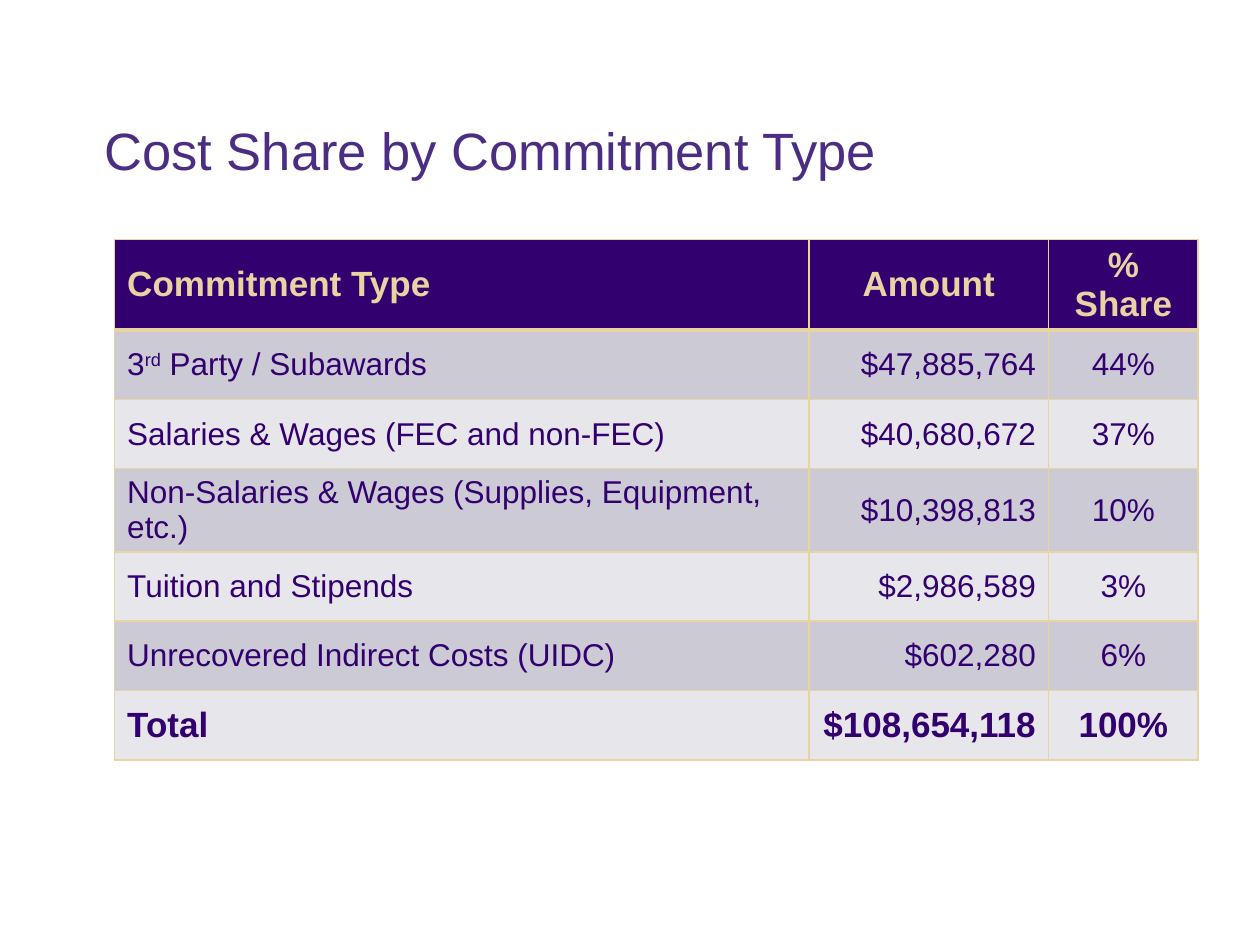
from lxml.etree import SubElement
from pptx import Presentation
from pptx.dml.color import RGBColor
from pptx.enum.text import MSO_ANCHOR as Anchor, MSO_AUTO_SIZE as AutoSize, PP_ALIGN as Align
from pptx.oxml.ns import qn
from pptx.util import Pt

TITLE = "Cost Share by Commitment Type"
HEADER = ("Commitment Type", "Amount", "% Share")
ITEMS = [
    (("3", "rd", " Party / Subawards"), "$47,885,764", "44%"),
    ("Salaries & Wages (FEC and non-FEC)", "$40,680,672", "37%"),
    ("Non-Salaries & Wages (Supplies, Equipment, etc.)", "$10,398,813", "10%"),
    ("Tuition and Stipends", "$2,986,589", "3%"),
    ("Unrecovered Indirect Costs (UIDC)", "$602,280", "6%"),
]
TOTAL = ("Total", "$108,654,118", "100%")
ROWS = [HEADER, *ITEMS, TOTAL]

FONT = "Arial"
PURPLE, TITLE_PURPLE, GOLD = "33006F", "4B2E83", "E8D3A2"
BANDS = ("E7E6EB", "CCCAD4")
TABLE_LEFT, TABLE_TOP, ROW_HEIGHT = 65.5, 136.8, 39.6
COLUMN_WIDTHS = (396.7, 137, 85.5)
ALIGNMENTS = (Align.LEFT, Align.RIGHT, Align.CENTER)


def color(value):
    return RGBColor.from_string(value)


def write(frame, text, size=18, fill=PURPLE, bold=False, align=Align.LEFT):
    paragraph = frame.paragraphs[0]
    paragraph.alignment = align
    parts = (text,) if isinstance(text, str) else text
    for index, part in enumerate(parts):
        run = paragraph.add_run()
        run.text = part
        font = run.font
        font.name, font.size, font.bold = FONT, Pt(size), bold
        font.color.rgb = color(fill)
        if index == 1:
            font._element.set("baseline", "30000")
    return paragraph


def add_borders(cell, **widths):
    properties = cell._tc.get_or_add_tcPr()
    for side in "LRTB":
        line = SubElement(properties, qn(f"a:ln{side}"), w=str(Pt(widths.get(side, 1))))
        solid = SubElement(line, qn("a:solidFill"))
        SubElement(solid, qn("a:srgbClr"), val=GOLD)


def add_title(slide):
    title = slide.shapes.title
    title.left, title.top, title.width, title.height = map(Pt, (52.5, 29.5, 644.5, 77.8))
    frame = title.text_frame
    frame.word_wrap = True
    frame.auto_size = AutoSize.NONE
    frame.vertical_anchor = Anchor.BOTTOM
    write(frame, TITLE, size=30, fill=TITLE_PURPLE).line_spacing = 0.9


def add_cost_table(slide):
    table = slide.shapes.add_table(
        len(ROWS), len(COLUMN_WIDTHS), Pt(TABLE_LEFT), Pt(TABLE_TOP),
        Pt(sum(COLUMN_WIDTHS)), Pt(ROW_HEIGHT * len(ROWS)),
    ).table
    table.first_row = table.horz_banding = False
    for column, width in zip(table.columns, COLUMN_WIDTHS):
        column.width = Pt(width)
    for row_index, values in enumerate(ROWS):
        table.rows[row_index].height = Pt(ROW_HEIGHT)
        is_header = values is HEADER
        emphasized = is_header or values is TOTAL
        for column_index, text in enumerate(values):
            cell = table.cell(row_index, column_index)
            add_borders(cell, T=3 if row_index == 1 else 1, B=3 if is_header else 1)
            cell.fill.solid()
            cell.fill.fore_color.rgb = color(PURPLE if is_header else BANDS[row_index % 2])
            cell.vertical_anchor = Anchor.MIDDLE
            centered = is_header and column_index > 0
            write(
                cell.text_frame, text,
                size=20 if emphasized else 18,
                fill=GOLD if is_header else PURPLE,
                bold=emphasized,
                align=Align.CENTER if centered else ALIGNMENTS[column_index],
            )


def main():
    presentation = Presentation()
    presentation.slide_width, presentation.slide_height = Pt(720), Pt(540)
    slide = presentation.slides.add_slide(presentation.slide_layouts[5])
    add_title(slide)
    add_cost_table(slide)
    presentation.save("out.pptx")


if __name__ == "__main__":
    main()
